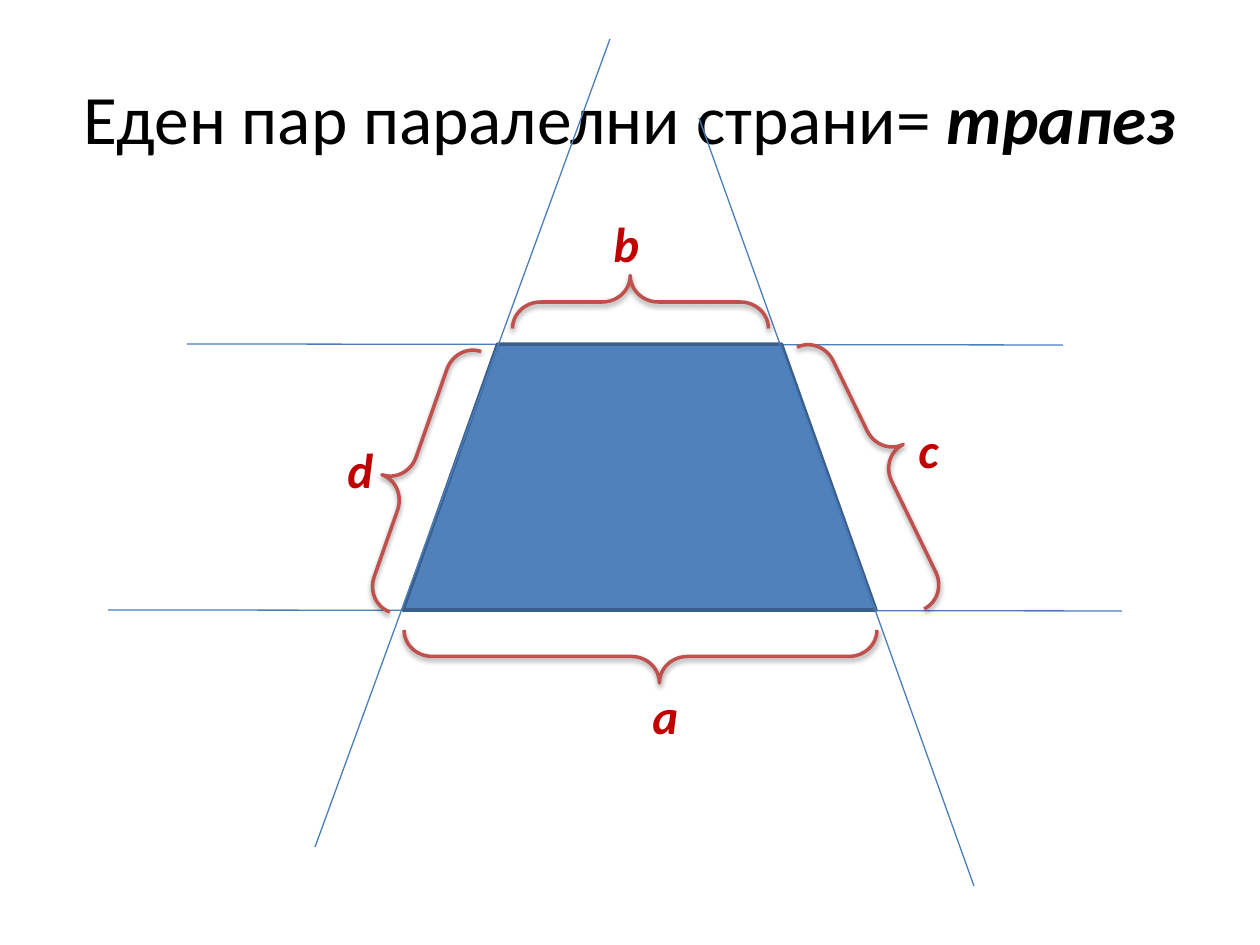
from dataclasses import dataclass

from lxml import etree
from pptx import Presentation
from pptx.dml.color import RGBColor
from pptx.enum.shapes import MSO_CONNECTOR, MSO_SHAPE
from pptx.enum.text import MSO_ANCHOR, MSO_AUTO_SIZE, PP_ALIGN
from pptx.oxml.ns import qn
from pptx.util import Emu, Pt

STRAIGHT = MSO_CONNECTOR.STRAIGHT
TRAPEZOID = MSO_SHAPE.FLOWCHART_MANUAL_OPERATION
BRACE = MSO_SHAPE.RIGHT_BRACE
MIDDLE = MSO_ANCHOR.MIDDLE
CENTER = PP_ALIGN.CENTER
NO_FIT = MSO_AUTO_SIZE.NONE
GROW = MSO_AUTO_SIZE.SHAPE_TO_FIT_TEXT
TITLE_ONLY = 5
EMU_PER_PX = 914400 / 126


@dataclass(frozen=True)
class Theme:
    font: str = "Calibri"
    black: str = "000000"
    label: str = "C00000"
    fill: str = "4F81BD"
    outline: str = "3A5F8C"
    guide: str = "4B7EBC"
    brace: str = "C0504D"
    title_size: float = 39.6
    label_size: float = 28
    thin: float = 0.75
    thick: float = 2


THEME = Theme()

# Guide lines: start x, start y, end x, end y
PARALLEL_LINES = [(187, 344, 1063, 345), (108, 610, 1122, 611)]
SLANTED_LINES = [(974, 886, 699, 118), (315, 847, 610, 39)]

# Sides: brace box and rotation, label and its box
SIDES = [
    ((614, 420, 53, 473), 90, "а", (640, 679, 52, 72)),
    ((614, 174, 53, 256), 270, "b", (601, 207, 52, 72)),
    ((384, 335, 53, 276), 199.3, "d", (335, 433, 52, 72)),
    ((858, 321, 53, 291), 334.1, "c", (906, 413, 45, 72)),
]


def px(*lengths):
    return [Emu(round(length * EMU_PER_PX)) for length in lengths]


def apply_format(target, values):
    for name, value in values.items():
        setattr(target, name, value)


def format_line(line, color, width):
    line.color.rgb = RGBColor.from_string(color)
    line.width = Pt(width)


def add_run(paragraph, text, color, size, emphasis=False):
    font_format = {"name": THEME.font, "size": Pt(size),
                   "bold": emphasis, "italic": emphasis}
    run = paragraph.add_run()
    run.text = text
    apply_format(run.font, font_format)
    run.font.color.rgb = RGBColor.from_string(color)


def set_title(slide):
    title = slide.shapes.title
    position = zip(("left", "top", "width", "height"), px(63, 38, 1134, 157))
    apply_format(title, dict(position))
    apply_format(title.text_frame, {"word_wrap": True, "auto_size": NO_FIT,
                                    "vertical_anchor": MIDDLE})
    paragraph = title.text_frame.paragraphs[0]
    paragraph.alignment = CENTER
    add_run(paragraph, "Еден пар паралелни страни=", THEME.black, THEME.title_size)
    add_run(paragraph, " трапез", THEME.black, THEME.title_size, emphasis=True)


def add_guide(slide, ends):
    connector = slide.shapes.add_connector(STRAIGHT, *px(*ends))
    format_line(connector.line, THEME.guide, THEME.thin)
    etree.SubElement(connector.element.spPr, qn("a:effectLst"))


def add_outlined_shape(slide, kind, box, rotation, color):
    shape = slide.shapes.add_shape(kind, *px(*box))
    shape.rotation = rotation
    shape.shadow.inherit = False
    format_line(shape.line, color, THEME.thick)
    return shape


def add_trapezoid(slide):
    shape = add_outlined_shape(slide, TRAPEZOID, (403, 344, 473, 266), 180,
                               THEME.outline)
    shape.fill.solid()
    shape.fill.fore_color.rgb = RGBColor.from_string(THEME.fill)


def add_soft_shadow(shape):
    effects = shape.element.spPr.find(qn("a:effectLst"))
    shadow = etree.SubElement(effects, qn("a:outerShdw"), blurRad=str(Pt(3.1)),
                              dist=str(Pt(1.6)), dir="5400000", rotWithShape="0")
    color = etree.SubElement(shadow, qn("a:srgbClr"), val=THEME.black)
    etree.SubElement(color, qn("a:alpha"), val="38000")


def add_brace(slide, box, rotation):
    brace = add_outlined_shape(slide, BRACE, box, rotation, THEME.brace)
    brace.fill.background()
    brace.adjustments[0] = 0.53
    brace.adjustments[1] = 0.46
    add_soft_shadow(brace)


def add_label(slide, text, box):
    frame = slide.shapes.add_textbox(*px(*box)).text_frame
    apply_format(frame, {"word_wrap": False, "auto_size": GROW})
    add_run(frame.paragraphs[0], text, THEME.label, THEME.label_size, emphasis=True)


def main():
    presentation = Presentation()
    presentation.slide_width, presentation.slide_height = px(1260, 945)
    slide = presentation.slides.add_slide(presentation.slide_layouts[TITLE_ONLY])
    set_title(slide)

    # Trapezoid between the guide lines
    for ends in PARALLEL_LINES:
        add_guide(slide, ends)
    add_trapezoid(slide)
    for ends in SLANTED_LINES:
        add_guide(slide, ends)

    # Braces and names of the sides
    for brace_box, rotation, name, label_box in SIDES:
        add_brace(slide, brace_box, rotation)
        add_label(slide, name, label_box)

    presentation.save("out.pptx")


if __name__ == "__main__":
    main()
